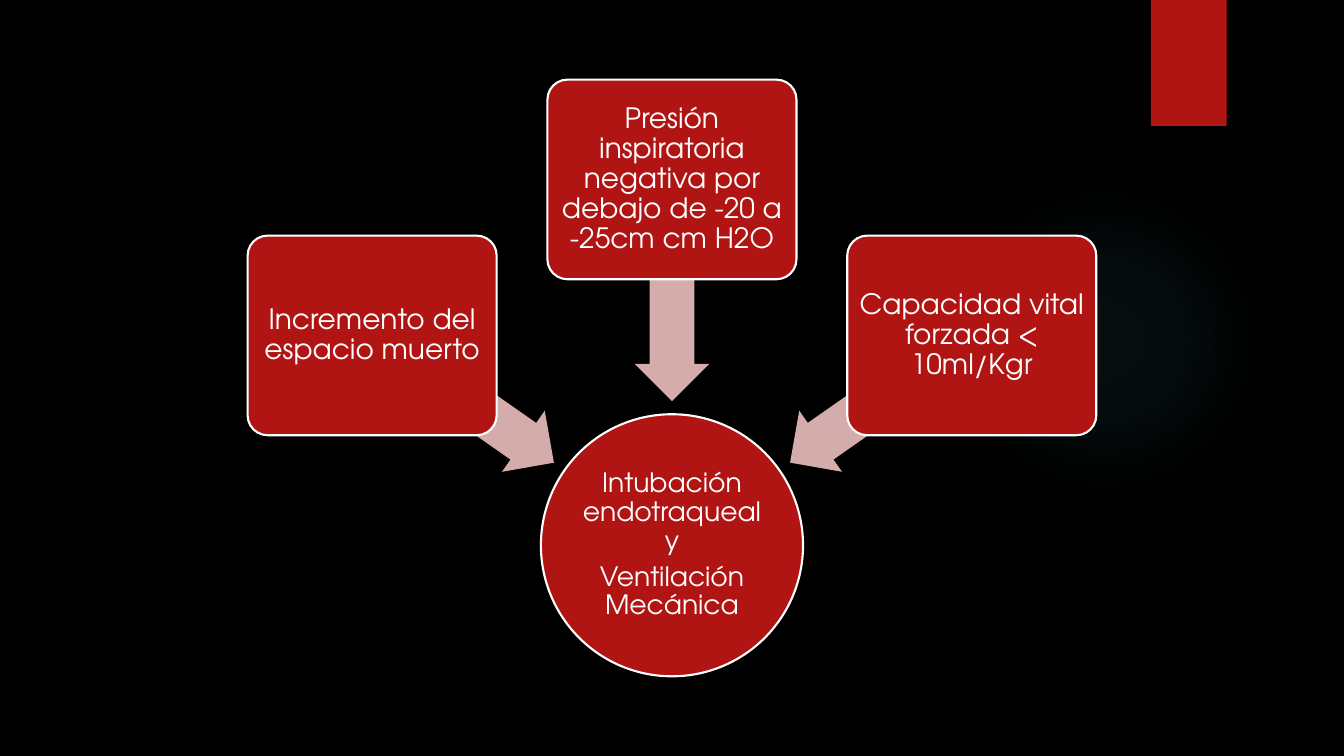
from math import cos, radians, sin

from pptx import Presentation
from pptx.dml.color import RGBColor
from pptx.enum.shapes import MSO_SHAPE as Preset
from pptx.enum.text import MSO_ANCHOR as Anchor, PP_ALIGN as Align
from pptx.oxml import parse_xml
from pptx.oxml.ns import nsdecls
from pptx.util import Inches, Pt

WIDTH, HEIGHT = 13.33, 7.5
BLACK, RED, PINK, WHITE, TEAL = "000000", "B01513", "D4ACAB", "FFFFFF", "50B9C1"
FONT = "TeX Gyre Adventor"

CAUSES = [
    (35, "Incremento del espacio muerto"),
    (90, "Presión inspiratoria negativa por debajo de -20 a -25cm cm H2O"),
    (145, "Capacidad vital forzada < 10ml/Kgr"),
]
OUTCOME = ["Intubación endotraqueal y", "Ventilación Mecánica"]
GLOW_STOPS = [(0, 7), (36, 6), (69, 0)]

HUB = (WIDTH / 2, 5.41)
HUB_SIZE, BOX_SIZE, ARROW_SIZE = (2.6, 2.6), (2.47, 1.98), (2.2, 0.74)
BOX_RADIUS, ARROW_RADIUS = 3.63, 2.53
GLOW_CENTER, GLOW_SIZE = (10.95, 3.37), (3.08, 3.08)
RIBBON_SIZE = (0.75, HEIGHT / 6)
RIBBON_CENTER = (11.79, RIBBON_SIZE[1] / 2)


def color(value):
    return RGBColor.from_string(value)


def apply(target, values):
    for name, value in values.items():
        setattr(target, name, value)


def add_centered(slide, preset, center, size, fill, adjustments=(), outlined=False):
    left, top = (middle - length / 2 for middle, length in zip(center, size))
    shape = slide.shapes.add_shape(preset, *map(Inches, (left, top, *size)))
    shape.shadow.inherit = False
    shape.fill.solid()
    shape.fill.fore_color.rgb = color(fill)
    for index, value in enumerate(adjustments):
        shape.adjustments[index] = value
    if outlined:
        shape.line.color.rgb = color(WHITE)
        shape.line.width = Pt(1.5)
    else:
        shape.line.fill.background()
    return shape


def write(shape, lines, size, inset):
    frame = shape.text_frame
    margins = ("margin_left", "margin_top", "margin_right", "margin_bottom")
    apply(frame, dict.fromkeys(margins, Inches(inset)))
    apply(frame, {"word_wrap": True, "vertical_anchor": Anchor.MIDDLE})
    frame.text = "\n".join(lines)
    for paragraph in frame.paragraphs:
        apply(paragraph, {"alignment": Align.CENTER, "line_spacing": 0.9, "space_after": Pt(5)})
        apply(paragraph.font, {"name": FONT, "size": Pt(size)})
        paragraph.font.color.rgb = color(WHITE)


def add_glow(slide):
    glow = add_centered(slide, Preset.OVAL, GLOW_CENTER, GLOW_SIZE, TEAL)
    stops = "".join(
        f'<a:gs pos="{position * 1000}"><a:srgbClr val="{TEAL}">'
        f'<a:alpha val="{alpha * 1000}"/></a:srgbClr></a:gs>'
        for position, alpha in GLOW_STOPS
    )
    gradient = parse_xml(
        f'<a:gradFill {nsdecls("a")}><a:gsLst>{stops}</a:gsLst><a:path path="circle">'
        '<a:fillToRect l="50000" t="50000" r="50000" b="50000"/></a:path></a:gradFill>'
    )
    properties = glow.element.spPr
    properties.replace(properties.find("{*}solidFill"), gradient)


def around_hub(angle, radius):
    return HUB[0] - radius * cos(radians(angle)), HUB[1] - radius * sin(radians(angle))


def main():
    """Draw three causes around the outcome they lead to."""
    presentation = Presentation()
    apply(presentation, {"slide_width": Inches(WIDTH), "slide_height": Inches(HEIGHT)})
    slide = presentation.slides.add_slide(presentation.slide_layouts[6])
    slide.background.fill.solid()
    slide.background.fill.fore_color.rgb = color(BLACK)

    add_glow(slide)
    add_centered(slide, Preset.RECTANGLE, RIBBON_CENTER, RIBBON_SIZE, RED)
    hub = add_centered(slide, Preset.OVAL, HUB, HUB_SIZE, RED, outlined=True)
    write(hub, OUTCOME, 19, 0.01)

    for angle, cause in CAUSES:
        arrow = add_centered(slide, Preset.LEFT_ARROW, around_hub(angle, ARROW_RADIUS),
                             ARROW_SIZE, PINK, (0.6, 0.5))
        arrow.rotation = 180 + angle
        box = add_centered(slide, Preset.ROUNDED_RECTANGLE, around_hub(angle, BOX_RADIUS),
                           BOX_SIZE, RED, (0.1,), outlined=True)
        write(box, [cause], 20, 0.04)

    presentation.save("out.pptx")


if __name__ == "__main__":
    main()
